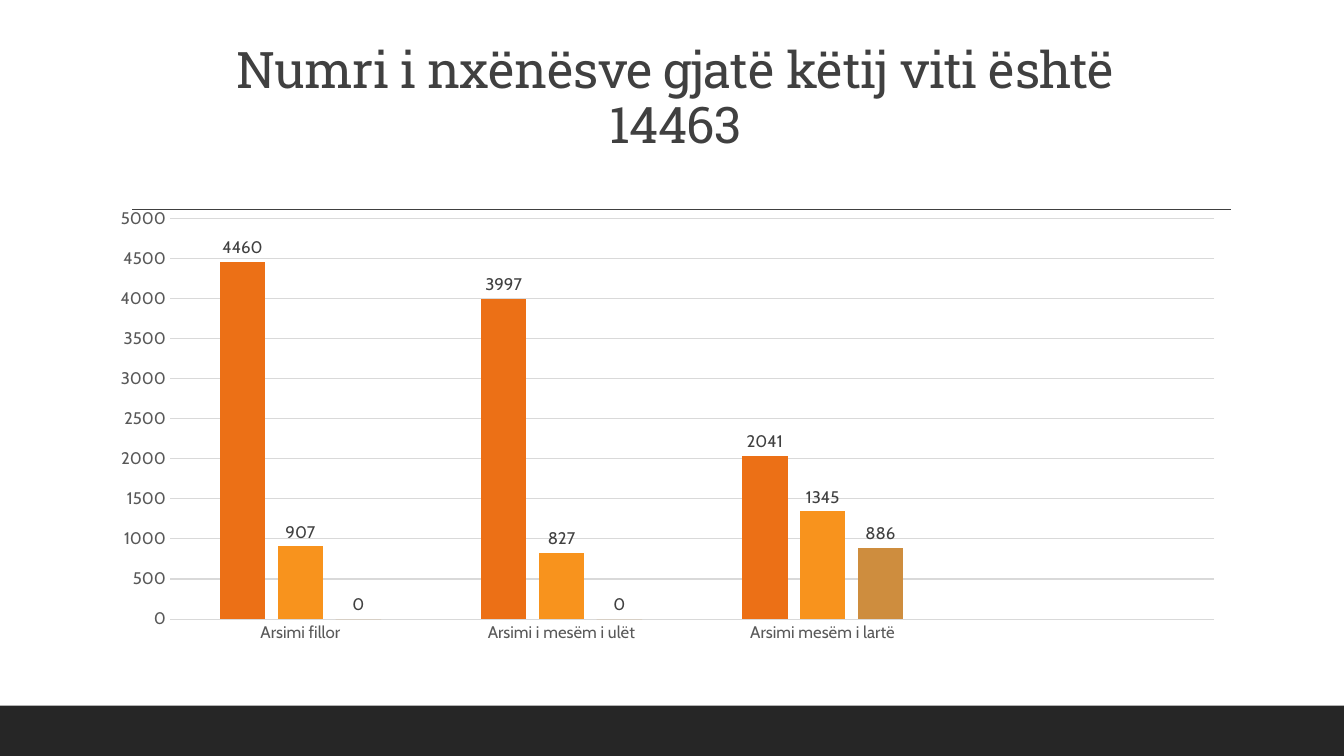
from lxml import etree
from pptx import Presentation
from pptx.chart.data import CategoryChartData
from pptx.dml.color import RGBColor
from pptx.enum.chart import XL_CHART_TYPE as ChartType, XL_LABEL_POSITION as LabelPosition
from pptx.enum.chart import XL_TICK_MARK as TickMark
from pptx.enum.shapes import MSO_CONNECTOR as Connector, MSO_SHAPE as Shape
from pptx.enum.text import MSO_ANCHOR as Anchor, PP_ALIGN as Align
from pptx.oxml import parse_xml
from pptx.oxml.ns import nsdecls, qn
from pptx.util import Inches, Pt

TITLE = ["Numri i nxënësve gjatë këtij viti është", "14463"]
CATEGORIES = ["Arsimi fillor", "Arsimi i mesëm i ulët", "Arsimi mesëm i lartë", ""]
ORANGE = RGBColor(0xEC, 0x70, 0x16)
AMBER = RGBColor(0xF8, 0x93, 0x1D)
BRONZE = RGBColor(0xCE, 0x8D, 0x3E)
DARK = RGBColor(0x40, 0x40, 0x40)
AXIS_GRAY = RGBColor(0x59, 0x59, 0x59)
GRID_GRAY = RGBColor(0xD9, 0xD9, 0xD9)
FOOTER = RGBColor(0x26, 0x26, 0x26)
BLACK = RGBColor(0, 0, 0)
SERIES = [
    ("Series 1", [4460, 3997, 2041, None], ORANGE),
    ("Series 2", [907, 827, 1345, None], AMBER),
    ("Series 3", [0, 0, 886, None], BRONZE),
]
PLOT_AREA = {"x": 0.057, "y": 0.02, "w": 0.929, "h": 0.916}
WIDTH, HEIGHT = 13.33, 7.5
FOOTER_HEIGHT = HEIGHT / 15
RULE_LEFT, RULE_RIGHT, RULE_TOP = 1.31, 12.21, 2.08
TITLE_BOX = (1.2, 0.31, 11, 1.27)
CHART_BOX = (1.05, 2.07, 11.15, 4.35)


def inches(*lengths):
    return [Inches(length) for length in lengths]


def set_font(font, size, color, name="Cabin"):
    font.size, font.name = Pt(size), name
    font.bold = False
    font.color.rgb = color


def add_text(slide, lines, box, size, color, name, spacing, tracking):
    frame = slide.shapes.add_textbox(*inches(*box)).text_frame
    frame.word_wrap = True
    frame.vertical_anchor = Anchor.BOTTOM
    paragraph = frame.paragraphs[0]
    paragraph.alignment = Align.CENTER
    paragraph.line_spacing = spacing
    for index, line in enumerate(lines):
        if index:
            paragraph.add_line_break()
        run = paragraph.add_run()
        run.text = line
        set_font(run.font, size, color, name)
        run._r.get_or_add_rPr().set("spc", str(int(tracking * 100)))


def add_frame(slide):
    band = slide.shapes.add_shape(
        Shape.RECTANGLE, *inches(0, HEIGHT - FOOTER_HEIGHT, WIDTH, FOOTER_HEIGHT))
    band.shadow.inherit = False
    band.fill.solid()
    band.fill.fore_color.rgb = FOOTER
    band.line.fill.background()
    rule = slide.shapes.add_connector(
        Connector.STRAIGHT, *inches(RULE_LEFT, RULE_TOP, RULE_RIGHT, RULE_TOP))
    rule.line.color.rgb = DARK
    rule.line.width = Pt(1)
    etree.SubElement(rule._element.spPr, qn("a:effectLst"))


def set_plot_area(chart):
    plot_area = chart._chartSpace.chart.plotArea
    for layout in plot_area.findall(qn("c:layout")):
        plot_area.remove(layout)
    modes = '<c:layoutTarget val="inner"/><c:xMode val="edge"/><c:yMode val="edge"/>'
    shares = "".join(f'<c:{key} val="{share}"/>' for key, share in PLOT_AREA.items())
    plot_area.insert(0, parse_xml(
        f'<c:layout {nsdecls("c")}><c:manualLayout>{modes}{shares}</c:manualLayout></c:layout>'))


def add_pupil_chart(slide):
    data = CategoryChartData()
    data.categories = CATEGORIES
    for name, values, _ in SERIES:
        data.add_series(name, values)
    chart = slide.shapes.add_chart(
        ChartType.COLUMN_CLUSTERED, *inches(*CHART_BOX), data).chart
    chart.has_title = False
    chart.has_legend = False
    set_font(chart.font, 10, BLACK)
    set_plot_area(chart)
    plot = chart.plots[0]
    plot.gap_width, plot.overlap = 219, -27
    plot.vary_by_categories = False
    for series, (_, _, color) in zip(plot.series, SERIES):
        series.format.fill.solid()
        series.format.fill.fore_color.rgb = color
        labels = series.data_labels
        labels.show_value = True
        labels.position = LabelPosition.OUTSIDE_END
        set_font(labels.font, 12, DARK)
    for axis in (chart.category_axis, chart.value_axis):
        axis.major_tick_mark = axis.minor_tick_mark = TickMark.NONE
        set_font(axis.tick_labels.font, 12, AXIS_GRAY)
    values = chart.value_axis
    values.minimum_scale, values.maximum_scale, values.major_unit = 0, 5000, 500
    values.format.line.fill.background()
    for line in (chart.category_axis.format.line, values.major_gridlines.format.line):
        line.color.rgb = GRID_GRAY
        line.width = Pt(0.75)


def main():
    """Build the slide showing pupil numbers by level of education."""
    presentation = Presentation()
    presentation.slide_width, presentation.slide_height = inches(WIDTH, HEIGHT)
    slide = presentation.slides.add_slide(presentation.slide_layouts[6])
    add_frame(slide)
    add_text(slide, TITLE, TITLE_BOX, size=36, color=DARK, name="Roboto Slab",
             spacing=0.9, tracking=-0.5)
    add_pupil_chart(slide)
    presentation.save("out.pptx")


if __name__ == "__main__":
    main()
